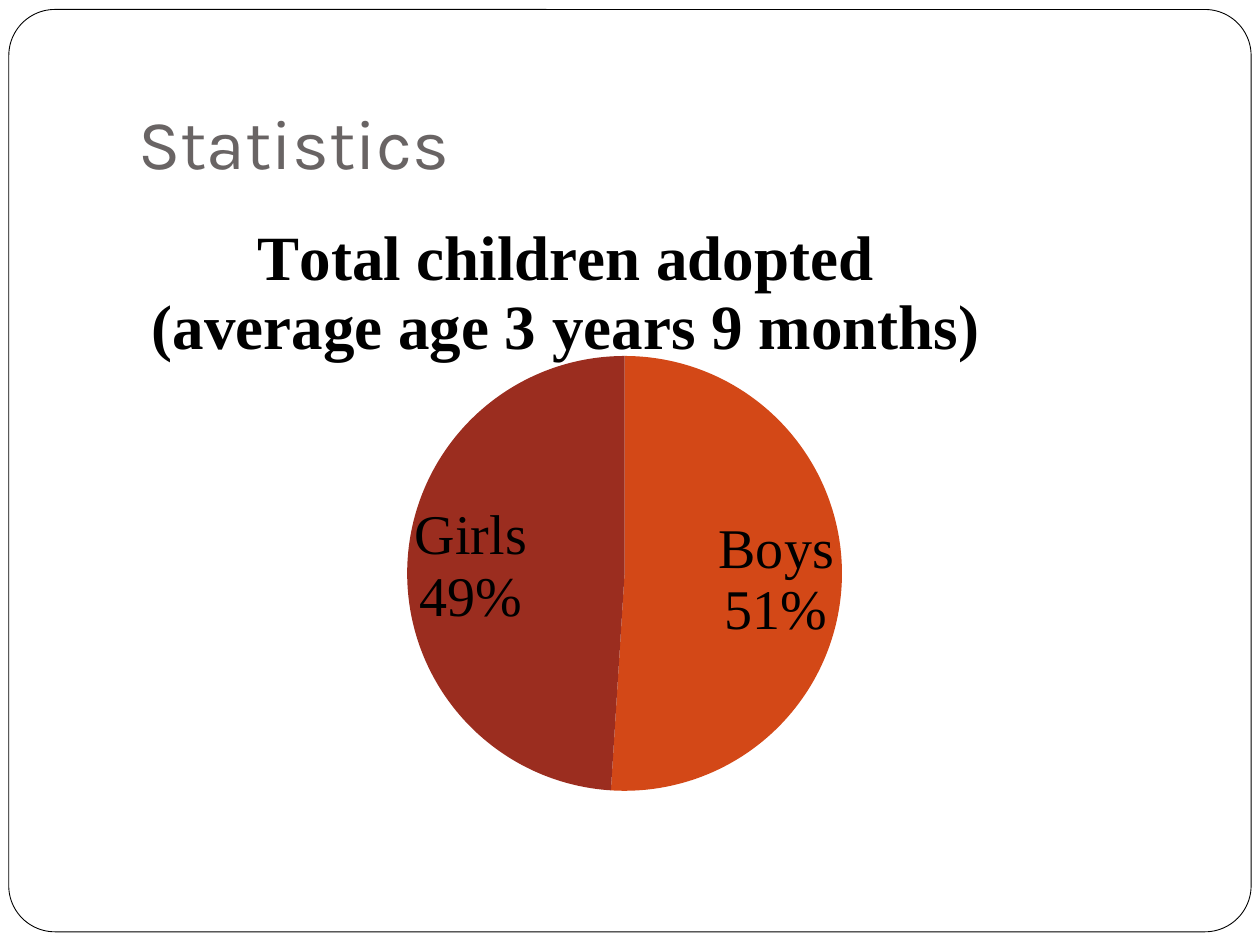
from lxml.etree import SubElement
from pptx import Presentation
from pptx.chart.data import CategoryChartData
from pptx.dml.color import RGBColor
from pptx.enum.chart import XL_CHART_TYPE, XL_LABEL_POSITION
from pptx.enum.shapes import MSO_SHAPE
from pptx.enum.text import MSO_ANCHOR
from pptx.oxml.ns import qn
from pptx.util import Inches, Pt

WIDE, HIGH = 10, 7.5


def tint(code):
    return RGBColor.from_string(code)


def place(layout, **spots):
    """Fill a chart layout element with a manual position."""
    for child in list(layout):
        layout.remove(child)
    manual = SubElement(layout, qn("c:manualLayout"))
    for tag, val in spots.items():
        SubElement(manual, qn(f"c:{tag}")).set("val", str(val))


def layout_of(parent, index):
    """Give the layout element of a chart part, made if missing."""
    found = parent.find(qn("c:layout"))
    if found is None:
        found = SubElement(parent, qn("c:layout"))
        parent.insert(index, found)
    return found


class Page:
    head_font, body_font = "Karla", "Times New Roman"
    ink, paper, gray = "000000", "FFFFFF", "696464"

    def __init__(self, deck):
        self.slide = deck.slides.add_slide(deck.slide_layouts[6])
        self.shapes = self.slide.shapes

    def box(self, x, y, w, h):
        """Turn shares of the slide into lengths."""
        return (Inches(x * WIDE), Inches(y * HIGH),
                Inches(w * WIDE), Inches(h * HIGH))

    def style(self, font, name, size, color, bold=False):
        font.name, font.size, font.bold = name, Pt(size), bold
        font.color.rgb = tint(color)

    def frame(self, *area):
        card = self.shapes.add_shape(MSO_SHAPE.ROUNDED_RECTANGLE,
                                     *self.box(*area))
        card.adjustments[0] = 0.05
        card.shadow.inherit = False
        card.fill.solid()
        card.fill.fore_color.rgb = tint(self.paper)
        card.line.color.rgb = tint(self.ink)
        card.line.width = Pt(0.5)

    def title(self, text, *area):
        frame = self.shapes.add_textbox(*self.box(*area)).text_frame
        frame.word_wrap = True
        frame.vertical_anchor = MSO_ANCHOR.BOTTOM
        frame.margin_bottom = Inches(0.1)
        frame.text = text
        self.style(frame.paragraphs[0].runs[0].font,
                   self.head_font, 40, self.gray)

    def pie(self, lines, slices, *area):
        data = CategoryChartData()
        data.categories = [name for name, _, _ in slices]
        data.add_series("Series 1", [count for _, count, _ in slices])
        chart = self.shapes.add_chart(XL_CHART_TYPE.PIE, *self.box(*area),
                                      data).chart
        self.style(chart.font, self.body_font, 10, self.ink)
        chart.has_legend = False

        # Chart title, one paragraph per line
        chart.has_title = True
        head = chart.chart_title
        head.include_in_layout = False
        head.text_frame.text = "\n".join(lines)
        for para in head.text_frame.paragraphs:
            self.style(para.runs[0].font, self.body_font, 36, self.ink, True)
        place(layout_of(head._element, 1),
              xMode="edge", yMode="edge", x=0.03, y=0.03)

        # Pie position and slice colours
        plot = chart.plots[0]
        place(layout_of(chart._chartSpace.chart.plotArea, 0),
              layoutTarget="inner", xMode="edge", yMode="edge",
              x=0.27, y=0.25, w=0.41, h=0.69)
        plot.vary_by_categories = True
        for i, (_, _, color) in enumerate(slices):
            fill = plot.series[0].points[i].format.fill
            fill.solid()
            fill.fore_color.rgb = tint(color)

        # Name and share on each slice
        labels = plot.series[0].data_labels
        labels.show_category_name = labels.show_percentage = True
        labels.show_value = False
        labels.number_format = "0%"
        labels.number_format_is_linked = False
        labels.position = XL_LABEL_POSITION.INSIDE_END
        self.style(labels.font, self.body_font, 32, self.ink)
        mark = SubElement(labels._element, qn("c:separator"))
        mark.text = "\n"
        labels._element.find(qn("c:showBubbleSize")).addnext(mark)


def main():
    deck = Presentation()
    deck.slide_width, deck.slide_height = Inches(WIDE), Inches(HIGH)
    page = Page(deck)
    page.frame(0.007, 0.01, 0.986, 0.976)
    page.title("Statistics", 0.1, 0.04, 0.85, 0.167)
    page.pie(["Total children adopted", "(average age 3 years 9 months)"],
             [("Boys", 51, "D34817"), ("Girls", 49, "9B2D1F")],
             0.092, 0.21, 0.85, 0.667)
    deck.save("out.pptx")


if __name__ == "__main__":
    main()
